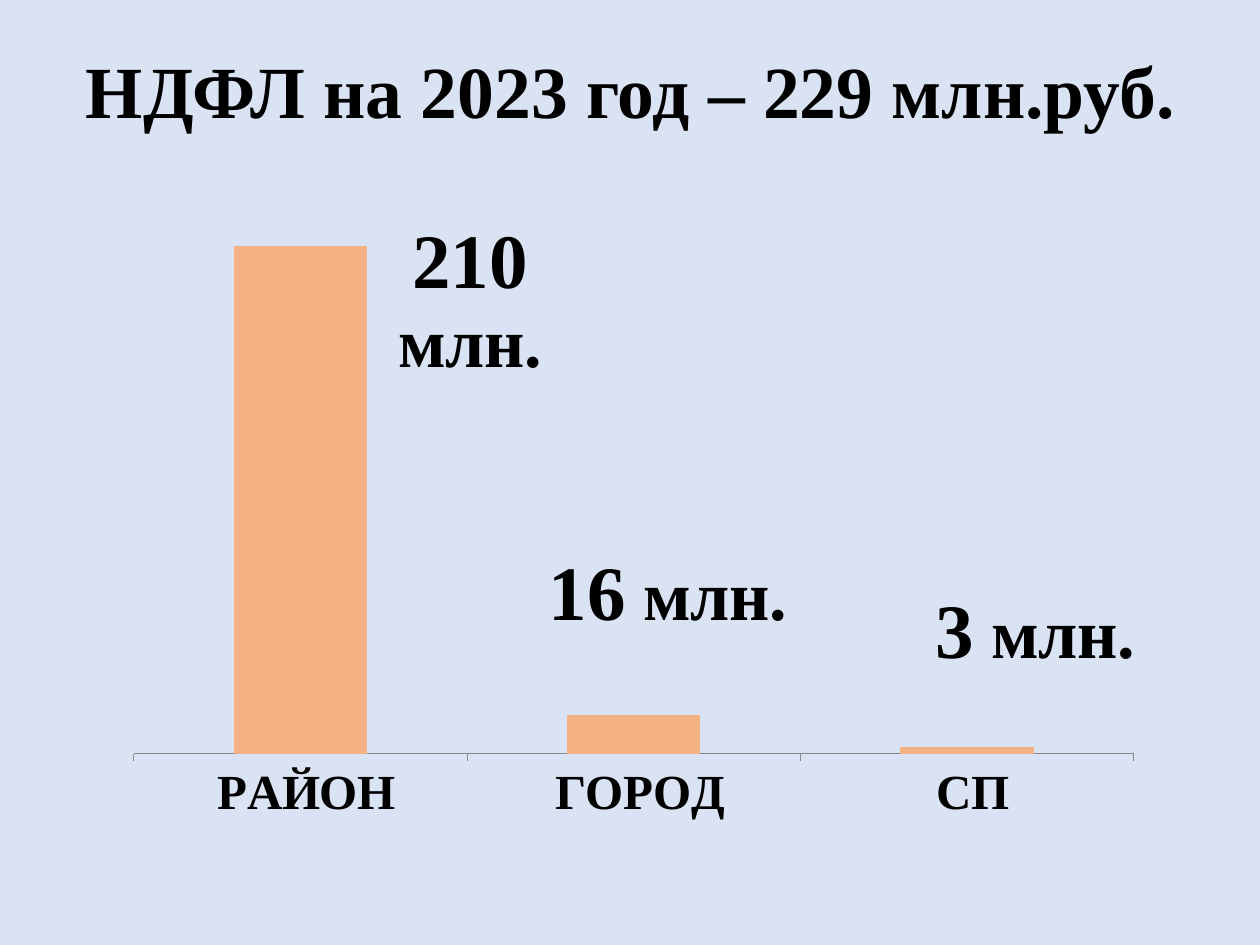
from dataclasses import dataclass

import lxml.etree
import pptx
import pptx.chart.data
import pptx.chart.series
import pptx.dml.color
import pptx.enum.chart
import pptx.enum.text
import pptx.oxml
import pptx.oxml.ns
import pptx.slide
import pptx.text.text
import pptx.util

Pt = pptx.util.Pt
qn = pptx.oxml.ns.qn
COLORS = {"background": "DAE3F3", "bar": "F4B183", "text": "000000", "axis": "878787"}
SERIF = "Times New Roman"
NO_LEADER_LINES = (
    '<c:extLst xmlns:c="http://schemas.openxmlformats.org/drawingml/2006/chart">'
    '<c:ext uri="{CE6537A1-D6FC-4f65-9D91-7224C49458BB}"'
    ' xmlns:c15="http://schemas.microsoft.com/office/drawing/2012/chart">'
    '<c15:showLeaderLines val="0"/></c:ext></c:extLst>'
)


@dataclass
class Budget:
    name: str
    amount: int
    dx: float
    dy: float


BUDGETS = [
    Budget(" РАЙОН", 210, 0.15, -0.27),
    Budget(" ГОРОД", 16, 0.03, -0.19),
    Budget(" СП", 3, 0.06, -0.16),
]


def rgb(name: str) -> pptx.dml.color.RGBColor:
    return pptx.dml.color.RGBColor.from_string(COLORS[name])


def style_font(font: pptx.text.text.Font, size: float) -> None:
    font.name = SERIF
    font.size = Pt(size)
    font.bold = True
    font.color.rgb = rgb("text")


def make_layout(inner: bool, **values: float) -> lxml.etree._Element:
    layout = lxml.etree.Element(qn("c:layout"))
    manual = lxml.etree.SubElement(layout, qn("c:manualLayout"))
    if inner:
        lxml.etree.SubElement(manual, qn("c:layoutTarget")).set("val", "inner")
        for mode in ("xMode", "yMode"):
            lxml.etree.SubElement(manual, qn(f"c:{mode}")).set("val", "edge")
    for key, value in values.items():
        lxml.etree.SubElement(manual, qn(f"c:{key}")).set("val", str(value))
    return layout


def add_title(s: pptx.slide.Slide, text: str) -> None:
    sp = s.shapes.title
    sp.left, sp.top, sp.width, sp.height = Pt(14.4), Pt(9), Pt(691.5), Pt(90)
    tf = sp.text_frame
    tf.text = text
    tf.word_wrap = True
    tf.vertical_anchor = pptx.enum.text.MSO_ANCHOR.MIDDLE
    p = tf.paragraphs[0]
    p.alignment = pptx.enum.text.PP_ALIGN.CENTER
    p.line_spacing = 0.9
    style_font(p.runs[0].font, 42)


def add_label(series: pptx.chart.series.BarSeries, index: int, budget: Budget) -> None:
    label = series.points[index].data_label
    p = label.text_frame.paragraphs[0]
    for text, size in ((str(budget.amount), 44), (" млн.", 40)):
        r = p.add_run()
        r.text = text
        style_font(r.font, size)
    node = series._element.find(qn("c:dLbls")).findall(qn("c:dLbl"))[index]
    node.insert(1, make_layout(False, x=budget.dx, y=budget.dy))
    node.find(qn("c:showSerName")).set("val", "1")


def style_labels(series: pptx.chart.series.BarSeries) -> None:
    labels = series.data_labels
    labels.show_value = True
    labels.show_series_name = True
    style_font(labels.font, 36)
    node = series._element.find(qn("c:dLbls"))
    for leader in node.findall(qn("c:showLeaderLines")):
        leader.set("val", "0")
    node.append(pptx.oxml.parse_xml(NO_LEADER_LINES))


def add_budget_chart(s: pptx.slide.Slide, budgets: list[Budget]) -> None:
    data = pptx.chart.data.CategoryChartData()
    data.categories = [b.name for b in budgets]
    data.add_series("Ряд 1", [b.amount for b in budgets])
    chart = s.shapes.add_chart(
        pptx.enum.chart.XL_CHART_TYPE.COLUMN_STACKED,
        Pt(25.2), Pt(54), Pt(648), Pt(423), data,
    ).chart
    chart.has_legend = False
    chart.has_title = False
    chart.font.name = "Calibri"
    chart.font.size = Pt(18)
    chart.font.color.rgb = rgb("text")

    plot = chart.plots[0]
    plot.gap_width = 150
    plot.overlap = 100
    plot.vary_by_categories = False
    area = plot._element.getparent()
    for old in area.findall(qn("c:layout")):
        area.remove(old)
    area.insert(0, make_layout(True, x=0.079, y=0.074, w=0.882, h=0.817))

    axis = chart.value_axis
    axis.has_major_gridlines = False
    axis.visible = False
    axis = chart.category_axis
    axis.major_tick_mark = pptx.enum.chart.XL_TICK_MARK.OUTSIDE
    axis.format.line.color.rgb = rgb("axis")
    axis.format.line.width = Pt(0.5)
    style_font(axis.tick_labels.font, 28)

    series = plot.series[0]
    series.format.fill.solid()
    series.format.fill.fore_color.rgb = rgb("bar")
    for i, budget in enumerate(budgets):
        add_label(series, i, budget)
    style_labels(series)


def main() -> None:
    prs = pptx.Presentation()
    prs.slide_width, prs.slide_height = Pt(720), Pt(540)
    s = prs.slides.add_slide(prs.slide_layouts[5])
    s.background.fill.solid()
    s.background.fill.fore_color.rgb = rgb("background")
    add_title(s, "НДФЛ на 2023 год – 229 млн.руб.")
    add_budget_chart(s, BUDGETS)
    prs.save("out.pptx")


if __name__ == "__main__":
    main()
